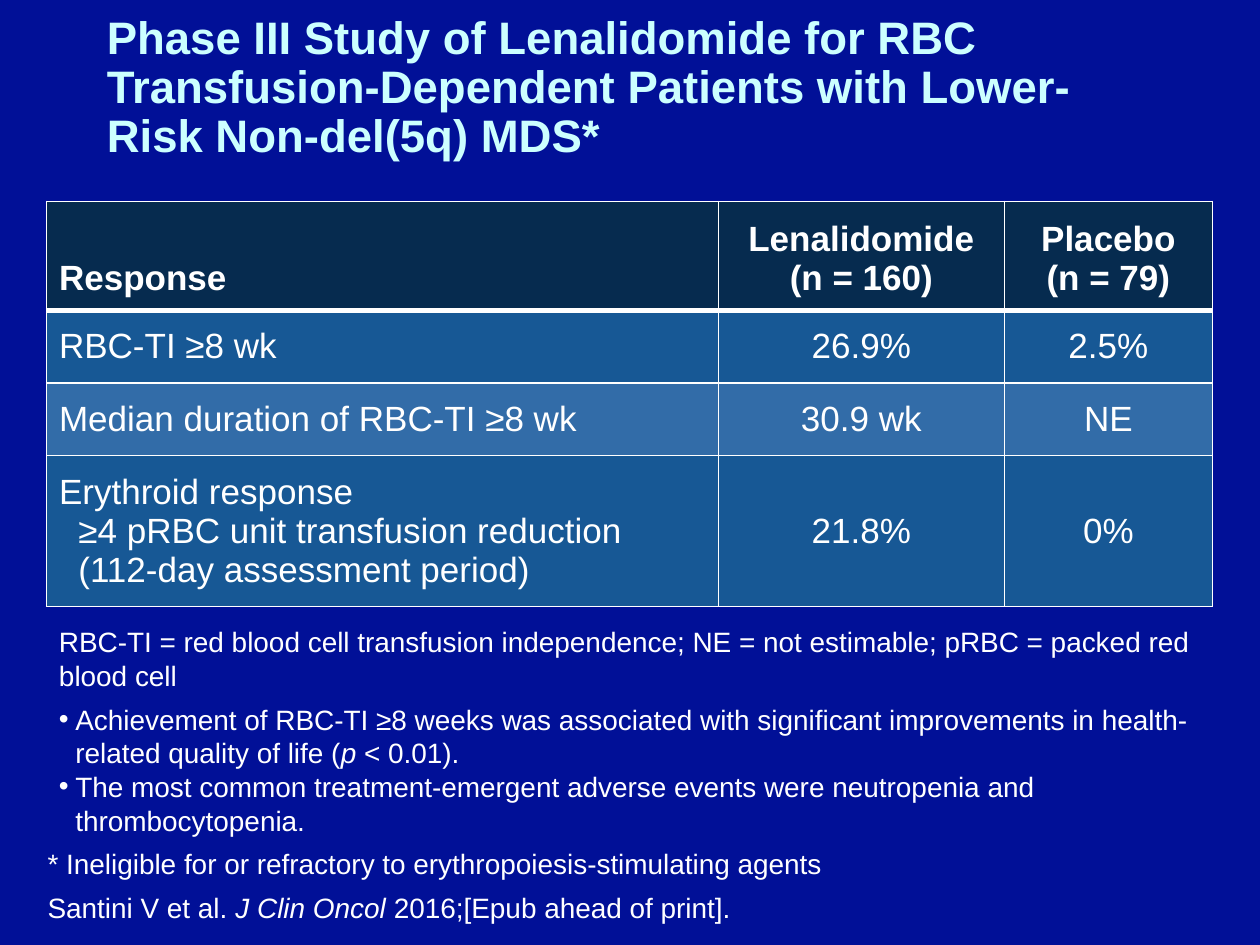
from dataclasses import dataclass

from lxml.etree import SubElement
from pptx import Presentation
from pptx.dml.color import RGBColor as RGB
from pptx.enum.text import MSO_ANCHOR as Anchor, MSO_AUTO_SIZE as AutoSize, PP_ALIGN as Align
from pptx.oxml import parse_xml
from pptx.oxml.ns import nsdecls, qn
from pptx.util import Cm, Pt


@dataclass(frozen=True)
class Theme:
    font: str = "Arial"
    background: str = "011097"
    title: str = "CCFFFF"
    text: str = "FFFFFF"
    header: str = "062B4F"
    bands: tuple = ("175895", "326CA8")
    title_size: int = 26
    table_size: int = 20
    note_size: int = 16
    rule: int = 1
    header_rule: int = 3
    space_after: int = 6


class SlideBuilder:
    """Add themed elements to one slide."""

    def __init__(self, prs, theme):
        self.theme = theme
        self.s = prs.slides.add_slide(prs.slide_layouts[5])
        fill = self.s.background.fill
        fill.solid()
        fill.fore_color.rgb = RGB.from_string(theme.background)

    def style(self, p, size, color, bold=False):
        for r in p.runs:
            r.font.name = self.theme.font
            r.font.size = Pt(size)
            r.font.bold = bold
            r.font.color.rgb = RGB.from_string(color)

    def indent(self, p, left, first=0):
        pPr = p._p.get_or_add_pPr()
        pPr.set("marL", str(Cm(left)))
        pPr.set("indent", str(Cm(first)))
        return pPr

    def title(self, text, x, y, w, h):
        sp = self.s.shapes.title
        sp.left, sp.top, sp.width, sp.height = Cm(x), Cm(y), Cm(w), Cm(h)
        tf = sp.text_frame
        tf.text = text
        tf.word_wrap = True
        tf.auto_size = AutoSize.NONE
        tf.vertical_anchor = Anchor.MIDDLE
        p = tf.paragraphs[0]
        p.alignment = Align.LEFT
        p.line_spacing = 0.9
        self.style(p, self.theme.title_size, self.theme.title, bold=True)

    def notes(self, paragraphs, x, y, w, h, anchor=Anchor.TOP):
        tf = self.s.shapes.add_textbox(Cm(x), Cm(y), Cm(w), Cm(h)).text_frame
        tf.word_wrap = True
        tf.auto_size = AutoSize.SHAPE_TO_FIT_TEXT
        tf.vertical_anchor = anchor
        for i, (bullet, parts) in enumerate(paragraphs):
            p = tf.add_paragraph() if i else tf.paragraphs[0]
            for j, part in enumerate(parts):
                r = p.add_run()
                r.text = part
                r.font.italic = j % 2 == 1
            if i == 0:
                p.space_after = Pt(self.theme.space_after)
            if bullet:
                pPr = self.indent(p, 0.33, -0.33)
                SubElement(pPr, qn("a:buFont")).set("typeface", self.theme.font)
                SubElement(pPr, qn("a:buChar")).set("char", "•")
            self.style(p, self.theme.note_size, self.theme.text)

    def borders(self, cell, bottom):
        tcPr = cell._tc.get_or_add_tcPr()
        for i, side in enumerate("LRTB"):
            width = Pt(bottom if side == "B" else self.theme.rule)
            tcPr.insert(i, parse_xml(
                f'<a:ln{side} {nsdecls("a")} w="{width}"><a:solidFill>'
                f'<a:srgbClr val="{self.theme.text}"/></a:solidFill></a:ln{side}>'))

    def cell(self, cell, text, row, col):
        t = self.theme
        head = row == 0
        cell.fill.solid()
        cell.fill.fore_color.rgb = RGB.from_string(t.header if head else t.bands[(row - 1) % 2])
        cell.vertical_anchor = Anchor.BOTTOM if head else Anchor.MIDDLE
        cell.margin_left = cell.margin_right = cell.margin_top = cell.margin_bottom = Cm(0.25)
        cell.text_frame.text = text
        for i, p in enumerate(cell.text_frame.paragraphs):
            p.alignment = Align.CENTER if col else Align.LEFT
            if i and not col:
                self.indent(p, 0.39)
            self.style(p, t.table_size, t.text, bold=head)
        self.borders(cell, t.header_rule if head else t.rule)

    def table(self, rows, x, y, widths, heights):
        table = self.s.shapes.add_table(len(rows), len(widths), Cm(x), Cm(y),
                                        Cm(sum(widths)), Cm(sum(heights))).table
        table.first_row = table.horz_banding = False
        for column, w in zip(table.columns, widths):
            column.width = Cm(w)
        for i, (values, h) in enumerate(zip(rows, heights)):
            table.rows[i].height = Cm(h)
            for j, value in enumerate(values):
                self.cell(table.cell(i, j), value, i, j)


def main():
    prs = Presentation()
    prs.slide_width, prs.slide_height = Cm(25.4), Cm(19.05)
    b = SlideBuilder(prs, Theme())
    b.notes([
        (False, ["* Ineligible for or refractory to erythropoiesis-stimulating agents"]),
        (False, ["Santini V et al. ", "J Clin Oncol ", "2016;[Epub ahead of print]."]),
    ], 0.71, 16.92, 24.69, 1.83, Anchor.BOTTOM)
    b.title("Phase III Study of Lenalidomide for RBC Transfusion-Dependent Patients "
            "with Lower-Risk Non-del(5q) MDS*", 1.9, 0, 21.6, 3.58)
    b.notes([
        (False, ["RBC-TI = red blood cell transfusion independence; NE = not estimable; "
                 "pRBC = packed red blood cell"]),
        (True, ["Achievement of RBC-TI ≥8 weeks was associated with significant improvements "
                "in health-related quality of life (", "p", " < 0.01)."]),
        (True, ["The most common treatment-emergent adverse events were neutropenia and "
                "thrombocytopenia."]),
    ], 0.94, 12.47, 23.5, 4.57)
    b.table([
        ("Response", "Lenalidomide\n(n = 160)", "Placebo\n(n = 79)"),
        ("RBC-TI ≥8 wk", "26.9%", "2.5%"),
        ("Median duration of RBC-TI ≥8 wk", "30.9 wk", "NE"),
        ("Erythroid response\n≥4 pRBC unit transfusion reduction\n(112-day assessment period)",
         "21.8%", "0%"),
    ], 0.94, 4.06, (13.54, 5.77, 4.19), (2.2, 1.46, 1.46, 3.05))
    prs.save("out.pptx")


if __name__ == "__main__":
    main()
